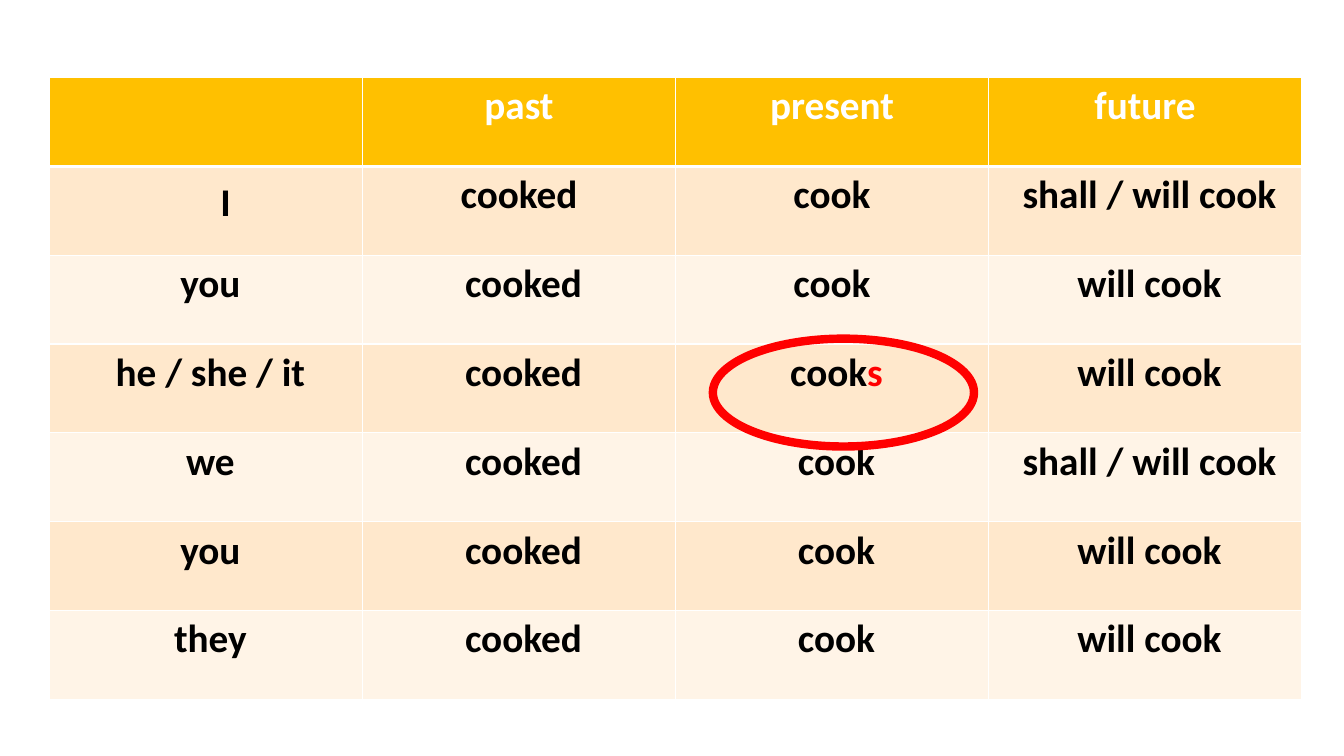
import pptx
import pptx.util
import pptx.dml.color
import pptx.enum.shapes
import pptx.enum.text
import pptx.oxml.ns
import lxml.etree

Inches = pptx.util.Inches
RGBColor = pptx.dml.color.RGBColor

WHITE = RGBColor(0xFF, 0xFF, 0xFF)
BLACK = RGBColor(0x00, 0x00, 0x00)
RED = RGBColor(0xFF, 0x00, 0x00)
GOLD = RGBColor(0xFF, 0xC0, 0x00)
PEACH = RGBColor(0xFF, 0xE8, 0xCC)
CREAM = RGBColor(0xFF, 0xF4, 0xE7)

TENSES = [
    ["", "past", "present", "future"],
    ["　I", "cooked", "cook", " shall / will cook"],
    [" you", " cooked", "cook", " will cook"],
    [" he / she / it", " cooked", " cook", " will cook"],
    [" we", " cooked", " cook", " shall / will cook"],
    [" you", " cooked", " cook", " will cook"],
    [" they", " cooked", " cook", " will cook"],
]
THIRD_PERSON = (3, 2)


def add_run(paragraph, text, color):
    run = paragraph.add_run()
    run.text = text
    run.font.name = "Calibri"
    run.font.size = pptx.util.Pt(28)
    run.font.bold = True
    run.font.color.rgb = color


def add_border(cell, side, points):
    qn = pptx.oxml.ns.qn
    properties = cell._tc.get_or_add_tcPr()
    line = lxml.etree.SubElement(properties, qn("a:ln" + side), w=str(pptx.util.Pt(points)))
    fill = lxml.etree.SubElement(line, qn("a:solidFill"))
    lxml.etree.SubElement(fill, qn("a:srgbClr"), val=str(WHITE))


presentation = pptx.Presentation()
presentation.slide_width = Inches(13.33)
presentation.slide_height = Inches(7.5)
slide = presentation.slides.add_slide(presentation.slide_layouts[6])

table = slide.shapes.add_table(
    len(TENSES), len(TENSES[0]), Inches(0.49), Inches(0.77), Inches(12.42), Inches(6.17)
).table

for row, texts in enumerate(TENSES):
    background = GOLD if row == 0 else PEACH if row % 2 else CREAM
    for column, text in enumerate(texts):
        cell = table.cell(row, column)
        for side in "LRTB":
            header_edge = (row, side) in [(0, "B"), (1, "T")]
            add_border(cell, side, 3 if header_edge else 1)
        cell.fill.solid()
        cell.fill.fore_color.rgb = background
        paragraph = cell.text_frame.paragraphs[0]
        paragraph.alignment = pptx.enum.text.PP_ALIGN.CENTER
        if text:
            add_run(paragraph, text, BLACK if row else WHITE)
        if (row, column) == THIRD_PERSON:
            add_run(paragraph, "s", RED)

highlight = slide.shapes.add_shape(
    pptx.enum.shapes.MSO_SHAPE.OVAL, Inches(7.07), Inches(3.36), Inches(2.59), Inches(1.07)
)
highlight.shadow.inherit = False
highlight.fill.background()
highlight.line.color.rgb = RED
highlight.line.width = pptx.util.Pt(6)

presentation.save("out.pptx")
